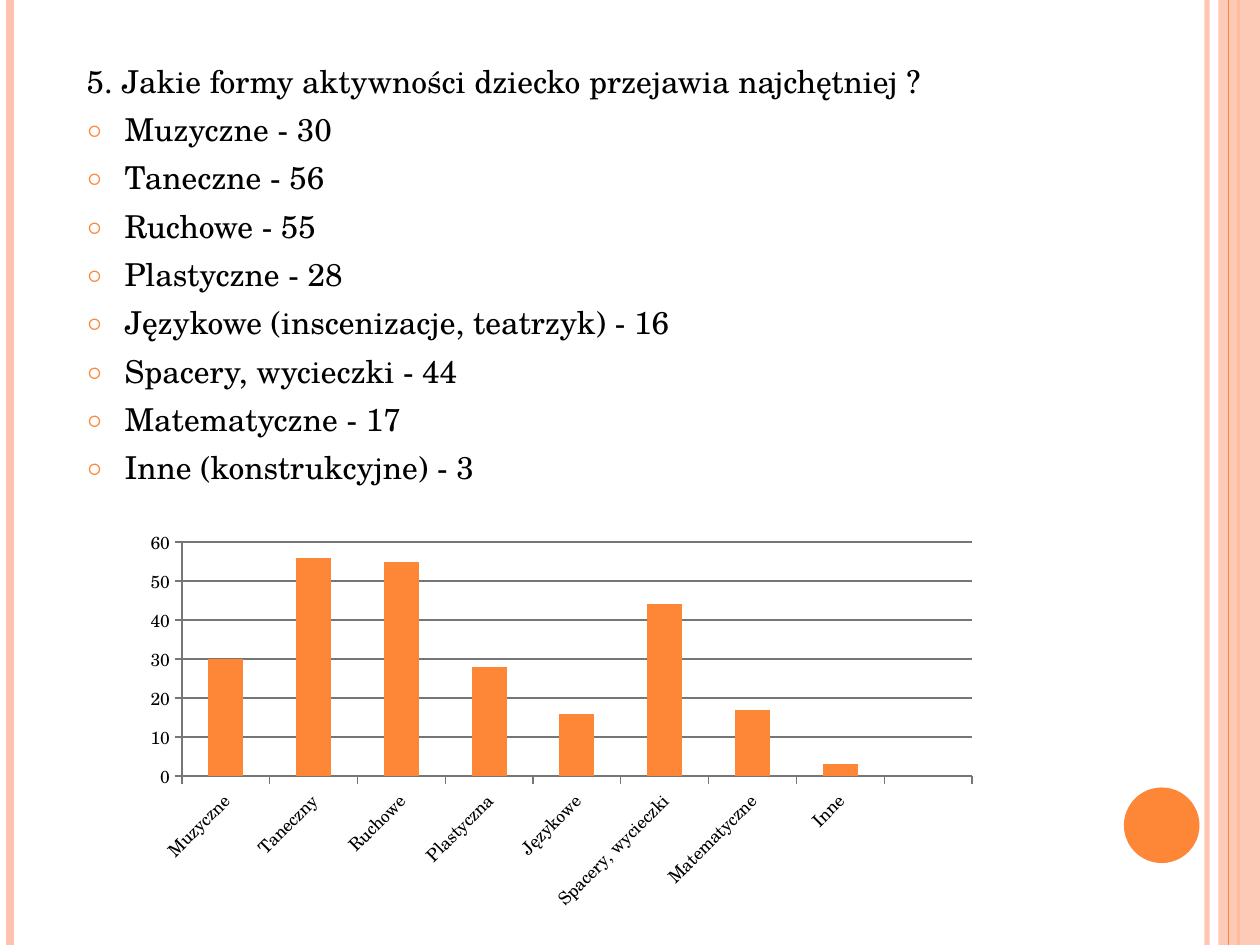
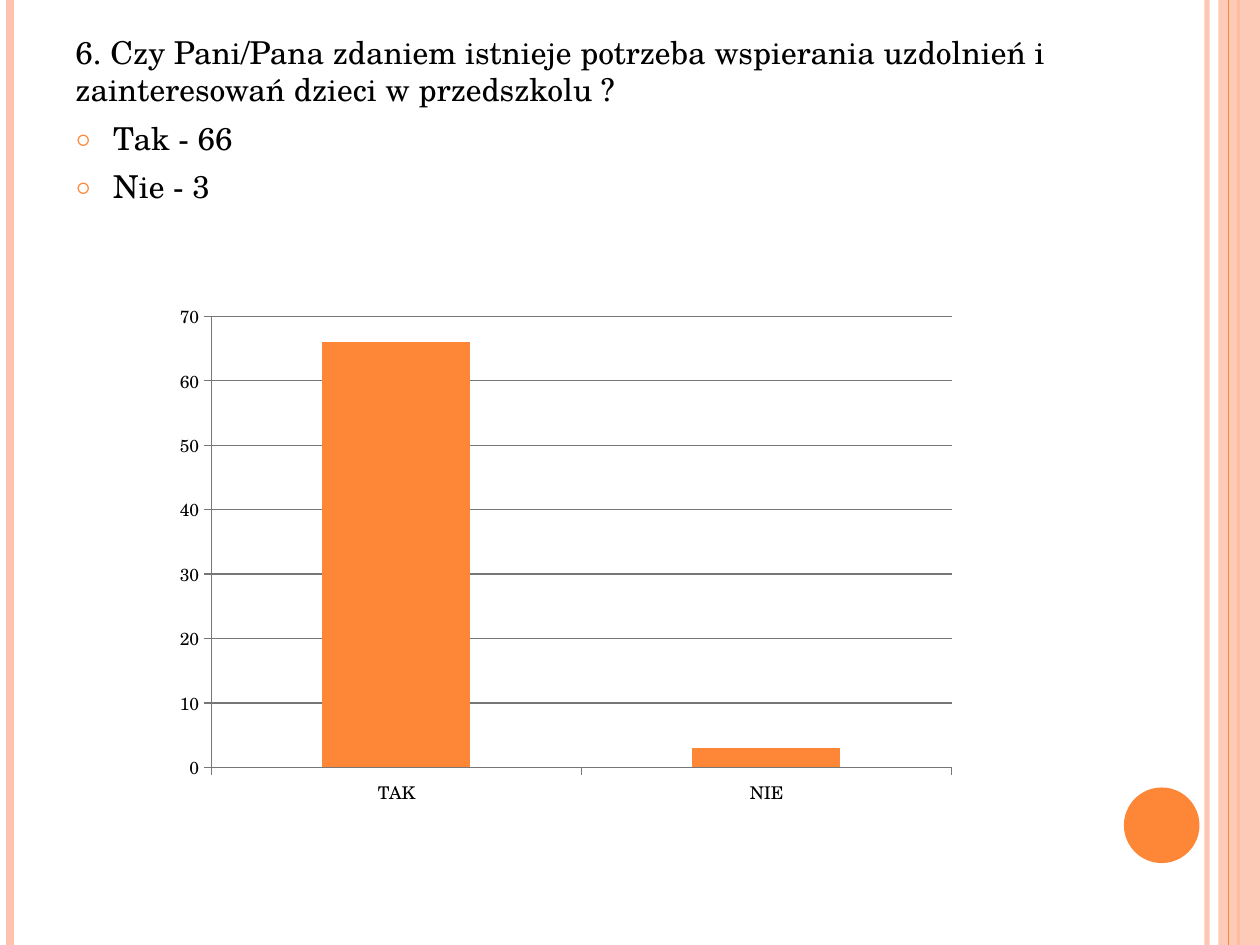
from lxml import etree
from pptx import Presentation
from pptx import util as u
from pptx.chart import data as chart_data
from pptx.dml.color import RGBColor
from pptx.enum import chart as ch, shapes, text
from pptx.oxml import ns

COLORS = {"accent": "FE8637", "pale": "FEC3AE", "text": "000000",
          "axis": "767676", "paper": "FFFFFF"}
FONT = "TeX Gyre Schola"
WIDTH, HEIGHT = 10, 7.5
# x position, colour, weight in points, opacity in percent
STRIPES_BEHIND = [(9.58, "pale", 3, 93), (0.08, "pale", 4.5, 100),
                  (9.83, "accent", 1.5, 100)]
STRIPE_IN_FRONT = (9.75, "accent", 0.75, 100)

ACTIVITIES_TEXT = [
    "Muzyczne - 30", "Taneczne - 56", "Ruchowe - 55", "Plastyczne - 28",
    "Językowe (inscenizacje, teatrzyk) - 16", "Spacery, wycieczki - 44",
    "Matematyczne - 17", "Inne (konstrukcyjne) - 3"]
# The last category is an empty place at the right of the chart.
ACTIVITIES = {"Muzyczne": 30, "Taneczny": 56, "Ruchowe": 55, "Plastyczna": 28,
              "Językowe": 16, "Spacery, wycieczki": 44, "Matematyczne": 17,
              "Inne": 3, "": None}


def color(name):
    return RGBColor.from_string(COLORS[name])


def inches(*lengths):
    return [u.Inches(length) for length in lengths]


def set_opacity(element, percent):
    for rgb in element.iter(ns.qn("a:srgbClr")):
        etree.SubElement(rgb, ns.qn("a:alpha"), val=str(percent * 1000))


def style_font(font, size):
    font.name = FONT
    font.size = u.Pt(size)
    font.color.rgb = color("text")


def add_stripe(slide, x, color_name, weight, opacity):
    stripe = slide.shapes.add_connector(
        shapes.MSO_CONNECTOR.STRAIGHT, *inches(x, 0, x, HEIGHT))
    stripe.line.color.rgb = color(color_name)
    stripe.line.width = u.Pt(weight)
    properties = stripe._element.spPr
    etree.SubElement(properties, ns.qn("a:effectLst"))
    if opacity < 100:
        set_opacity(properties, opacity)


def add_plain_shape(slide, kind, box, color_name):
    shape = slide.shapes.add_shape(kind, *inches(*box))
    shape.shadow.inherit = False
    shape.fill.solid()
    shape.fill.fore_color.rgb = color(color_name)
    shape.line.fill.background()
    return shape


def add_frame(slide):
    """Draw the side stripes, the right band and the page dot."""
    slide.background.fill.solid()
    slide.background.fill.fore_color.rgb = color("paper")
    for stripe in STRIPES_BEHIND:
        add_stripe(slide, *stripe)
    band = add_plain_shape(slide, shapes.MSO_SHAPE.RECTANGLE,
                           (9.67, 0, WIDTH - 9.67, HEIGHT), "pale")
    set_opacity(band._element.spPr, 87)
    add_stripe(slide, *STRIPE_IN_FRONT)
    add_plain_shape(slide, shapes.MSO_SHAPE.OVAL, (8.92, 6.25, 0.6, 0.6), "accent")


def add_bullet(paragraph):
    properties = paragraph._p.get_or_add_pPr()
    indent = u.Inches(0.3)
    properties.set("marL", str(indent))
    properties.set("indent", str(-indent))
    bullet_color = etree.SubElement(properties, ns.qn("a:buClr"))
    etree.SubElement(bullet_color, ns.qn("a:srgbClr"), val=COLORS["accent"])
    etree.SubElement(properties, ns.qn("a:buSzPct"), val="70000")
    etree.SubElement(properties, ns.qn("a:buFont"), typeface=FONT)
    etree.SubElement(properties, ns.qn("a:buChar"), char="○")


def add_question(slide, box, question, answers):
    frame = slide.shapes.add_textbox(*inches(*box)).text_frame
    frame.word_wrap = True
    frame.vertical_anchor = text.MSO_ANCHOR.TOP
    frame.text = "\n".join([question, *answers])
    for number, paragraph in enumerate(frame.paragraphs):
        paragraph.space_before = u.Pt(6)
        if number:
            add_bullet(paragraph)
        for run in paragraph.runs:
            style_font(run.font, 18)


def style_axis_line(line):
    line.color.rgb = color("axis")
    line.width = u.Pt(0.75)


def add_answer_chart(slide, box, counts, label_angle=0):
    data = chart_data.CategoryChartData()
    data.categories = list(counts)
    data.add_series("Series 1", list(counts.values()))
    chart = slide.shapes.add_chart(
        ch.XL_CHART_TYPE.COLUMN_STACKED, *inches(*box), data).chart
    chart.has_legend = False
    chart.has_title = False
    style_font(chart.font, 10)

    plot = chart.plots[0]
    plot.vary_by_categories = False
    plot.gap_width = 150
    plot.overlap = 100
    bars = plot.series[0].format.fill
    bars.solid()
    bars.fore_color.rgb = color("accent")

    for axis in (chart.category_axis, chart.value_axis):
        axis.major_tick_mark = ch.XL_TICK_MARK.OUTSIDE
        style_axis_line(axis.format.line)
        style_font(axis.tick_labels.font, 10)
    chart.value_axis.has_major_gridlines = True
    style_axis_line(chart.value_axis.major_gridlines.format.line)
    if label_angle:
        label_body = chart.category_axis._element.txPr.find(ns.qn("a:bodyPr"))
        label_body.set("rot", str(label_angle * 60000))


def add_framed_slide(deck):
    slide = deck.slides.add_slide(deck.slide_layouts[6])
    add_frame(slide)
    return slide


def main():
    deck = Presentation()
    deck.slide_width, deck.slide_height = inches(WIDTH, HEIGHT)

    activities = add_framed_slide(deck)
    add_question(activities, (0.59, 0.44, 8.17, 6.85),
                 "5. Jakie formy aktywności dziecko przejawia najchętniej ?",
                 ACTIVITIES_TEXT)
    add_answer_chart(activities, (1.06, 4.14, 6.79, 3.15), ACTIVITIES, label_angle=-45)

    support = add_framed_slide(deck)
    add_question(support, (0.5, 0.21, 8.75, 6.87),
                 "6. Czy Pani/Pana zdaniem istnieje potrzeba wspierania "
                 "uzdolnień i zainteresowań dzieci w przedszkolu ?",
                 ["Tak - 66", "Nie - 3"])
    add_answer_chart(support, (1.3, 2.33, 6.38, 4.14), {"TAK": 66, "NIE": 3})

    deck.save("out.pptx")


if __name__ == "__main__":
    main()
